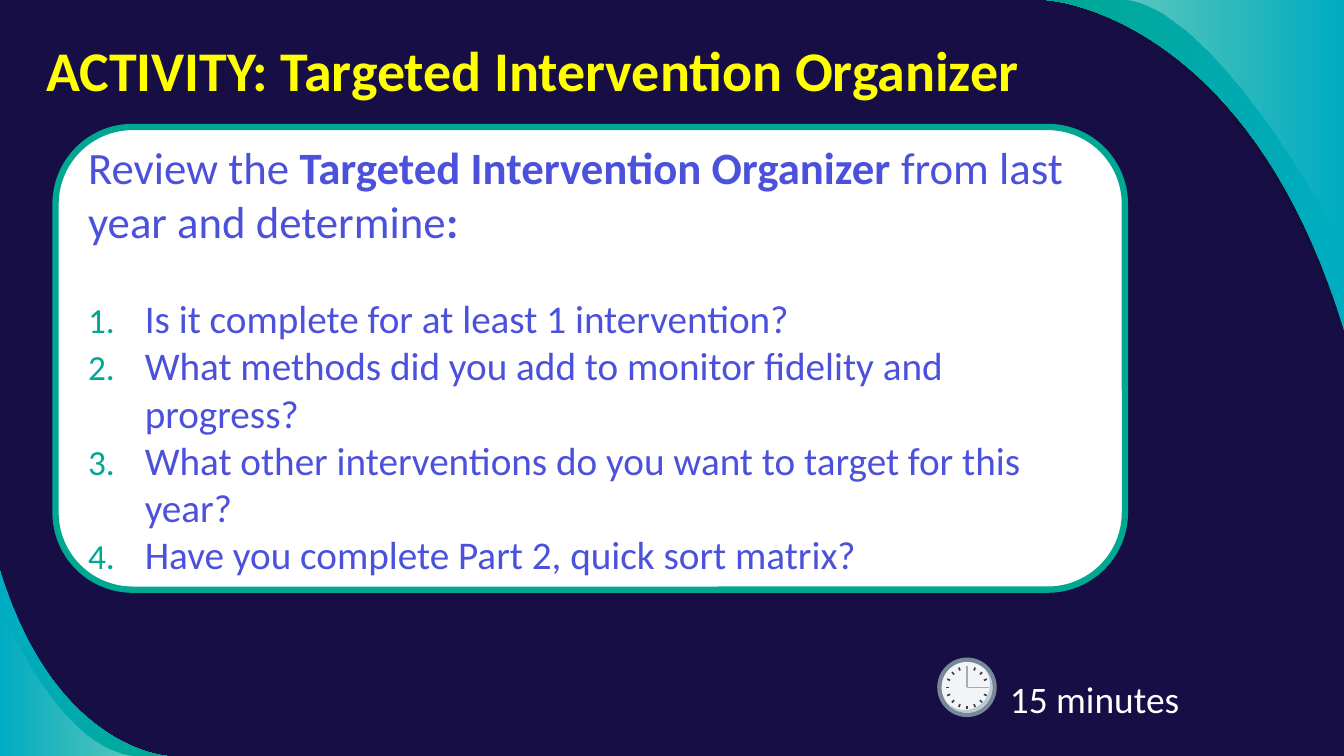
"""Build the Targeted Intervention Organizer activity slide."""
from math import cos, radians, sin

from pptx import Presentation
from pptx import util as u
from pptx.dml.color import RGBColor
from pptx.enum import shapes, text
from pptx.oxml.ns import qn
from lxml import etree

rgb = RGBColor.from_string
WIDTH, HEIGHT = 33.87, 19.05
TEAL, VIOLET, WHITE = "00A791", "4B51DB", "FFFFFF"


def outline(points):
    """Draw a closed, borderless shape through points given in cm."""
    pts = [(round(x * 1000), round(y * 1000)) for x, y in points]
    fb = slide.shapes.build_freeform(*pts[0], scale=u.Cm(1) / 1000)
    fb.add_line_segments(pts[1:], close=True)
    sp = fb.convert_to_shape()
    sp.shadow.inherit = False
    sp.line.fill.background()
    return sp


def write(p, words, size, color, bold=False):
    """Add a formatted run to a paragraph."""
    r = p.add_run()
    r.text = words
    for name, value in {"name": "Calibri", "size": u.Pt(size), "bold": bold}.items():
        setattr(r.font, name, value)
    r.font.color.rgb = rgb(color)


prs = Presentation()
prs.slide_width, prs.slide_height = u.Cm(WIDTH), u.Cm(HEIGHT)
slide = prs.slides.add_slide(prs.slide_layouts[5])
slide.background.fill.solid()
slide.background.fill.fore_color.rgb = rgb("160E44")

# Each corner: start, two controls, end, slide corner; then (colour, opacity) stops; angle
band = [("00ACC2", 100), (TEAL, 100)]
sheen = [(WHITE, 0), (WHITE, 36)]
shade = [("12102F", 54), ("12102F", 54)]
corners = [
    ([(26.19, 0), (26.19, 0), (31.37, 0.28), (WIDTH, 8.56), (WIDTH, 0)], shade, 180),
    ([(26.37, 0), (26.37, 0), (31.45, 0.28), (WIDTH, 8.33), (WIDTH, 0)], band, 180),
    ([(28.4, 0), (30.84, 0.38), (WIDTH, 6.2), (WIDTH, 6.2), (WIDTH, 0)], sheen, 180),
    ([(4.22, HEIGHT), (4.22, HEIGHT), (1.37, 18.9), (0, 14.35), (0, HEIGHT)], band, 0),
    ([(3.35, HEIGHT), (1.42, 18.82), (0, 15.27), (0, 15.27), (0, HEIGHT)], sheen, 0),
]
for (a, b, c, d, corner), stops, angle in corners:
    curve = []
    for i in range(41):
        t = i / 40
        weights = (1 - t) ** 3, 3 * t * (1 - t) ** 2, 3 * t * t * (1 - t), t ** 3
        curve.append([sum(w * q[axis] for w, q in zip(weights, (a, b, c, d))) for axis in (0, 1)])
    sp = outline(curve + [corner])
    sp.fill.gradient()
    sp.fill.gradient_angle = angle
    for stop, (color, opacity) in zip(sp.fill.gradient_stops, stops):
        stop.color.rgb = rgb(color)
    for clr, (color, opacity) in zip(sp.element.spPr.iter(qn("a:srgbClr")), stops):
        if opacity < 100:
            etree.SubElement(clr, qn("a:alpha"), val=str(opacity * 1000))

title = slide.shapes.title
box = {"left": 0.91, "top": 0.56, "width": 28.19, "height": 2.34}
for name, value in box.items():
    setattr(title, name, u.Cm(value))
tf = title.text_frame
tf.vertical_anchor = text.MSO_ANCHOR.MIDDLE
p = tf.paragraphs[0]
p.alignment = text.PP_ALIGN.LEFT
write(p, "ACTIVITY: Targeted Intervention Organizer", 40, "FFFF00", True)

card = slide.shapes.add_shape(
    shapes.MSO_SHAPE.ROUNDED_RECTANGLE, u.Cm(1.4), u.Cm(3.2), u.Cm(26.95), u.Cm(11.66))
card.shadow.inherit = False
card.fill.solid()
card.fill.fore_color.rgb = rgb(WHITE)
card.line.color.rgb = rgb(TEAL)
card.line.width = u.Pt(4.5)
tf = card.text_frame
tf.word_wrap = True
tf.vertical_anchor = text.MSO_ANCHOR.MIDDLE
p = tf.paragraphs[0]
p.alignment = text.PP_ALIGN.LEFT
for words, bold in [("Review the ", False), ("Targeted Intervention Organizer ", True),
                    ("from last year and determine", False), (":", True)]:
    write(p, words, 32, VIOLET, bold)

questions = [
    "Is it complete for at least 1 intervention?",
    "What methods did you add to monitor fidelity and progress?",
    "What other interventions do you want to target for this year?",
    "Have you complete Part 2, quick sort matrix?",
]
for i, question in enumerate(questions):
    p = tf.add_paragraph()
    p.alignment = text.PP_ALIGN.LEFT
    p.space_before = u.Pt(0 if i else 34)
    write(p, question, 28, VIOLET)
    pPr = p._p.get_or_add_pPr()
    pPr.set("marL", str(u.Cm(1.43)))
    pPr.set("indent", str(-u.Cm(1.43)))
    etree.SubElement(etree.SubElement(pPr, qn("a:buClr")), qn("a:srgbClr"), val=TEAL)
    etree.SubElement(pPr, qn("a:buSzPct"), val="90000")
    etree.SubElement(pPr, qn("a:buFont"), typeface="Calibri")
    etree.SubElement(pPr, qn("a:buAutoNum"), type="arabicPeriod")

timer = slide.shapes.add_textbox(u.Cm(24.38), u.Cm(16.1), u.Cm(7.39), u.Cm(2.44))
tf = timer.text_frame
tf.word_wrap = True
tf.vertical_anchor = text.MSO_ANCHOR.MIDDLE
margins = {"left": 1.07, "right": 0.33, "top": 0.33, "bottom": 0.33}
for side, value in margins.items():
    setattr(tf, f"margin_{side}", u.Cm(value))
tf.paragraphs[0].line_spacing = 1.5
write(tf.paragraphs[0], "15 minutes", 26.7, WHITE)

cx, cy, face = 24.37, 17.32, 0.64
for radius, color in [(0.75, "798898"), (face, "F2F4F7")]:
    sp = slide.shapes.add_shape(shapes.MSO_SHAPE.OVAL, u.Cm(cx - radius), u.Cm(cy - radius),
                                u.Cm(2 * radius), u.Cm(2 * radius))
    sp.shadow.inherit = False
    sp.fill.solid()
    sp.fill.fore_color.rgb = rgb(color)
    sp.line.fill.background()

arc = [(cx + face * cos(radians(deg)), cy + face * sin(radians(deg))) for deg in range(-45, 136, 5)]
crescent = outline(arc + [(x - 0.06, y - 0.07) for x, y in reversed(arc)])
crescent.fill.solid()
crescent.fill.fore_color.rgb = rgb("BCCAD6")

for k in range(16):
    is_hand = k in (0, 4)
    dx, dy = sin(radians(k * 22.5)), -cos(radians(k * 22.5))
    start, end = (0, 0.55) if is_hand else (0.46, 0.54)
    mark = slide.shapes.add_connector(
        shapes.MSO_CONNECTOR.STRAIGHT, u.Cm(cx + start * dx), u.Cm(cy + start * dy),
        u.Cm(cx + end * dx), u.Cm(cy + end * dy))
    mark.line.color.rgb = rgb("A3ADB8" if is_hand else "3D3D3D")
    mark.line.width = u.Pt(1.2)
    etree.SubElement(mark._element.spPr, qn("a:effectLst"))

prs.save("out.pptx")
